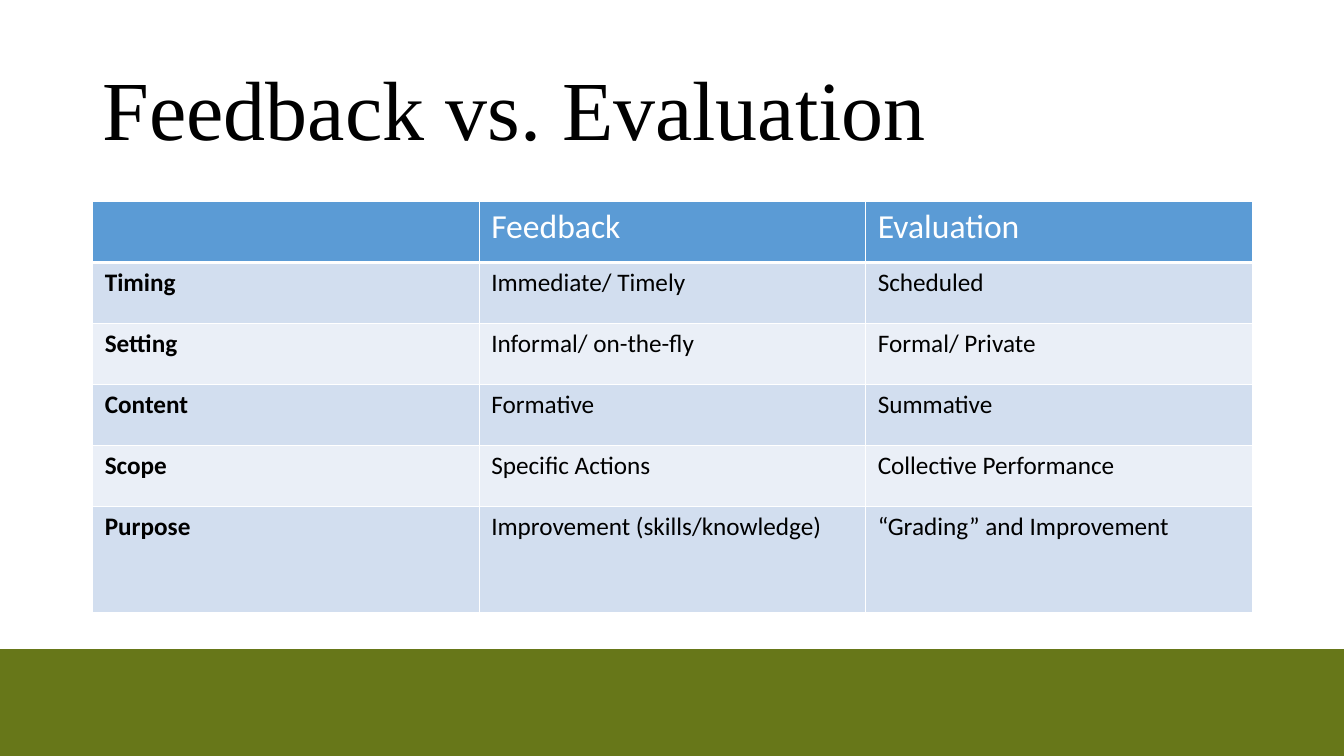
from lxml.etree import SubElement as Sub
from pptx import Presentation
from pptx.dml.color import RGBColor as RGB
from pptx.enum.shapes import MSO_SHAPE as Shape
from pptx.enum.text import MSO_ANCHOR as Anchor
from pptx.oxml.ns import qn
from pptx.util import Inches, Pt

ROWS = [
    ("", "Feedback", "Evaluation"),
    ("Timing", "Immediate/ Timely", "Scheduled"),
    ("Setting", "Informal/ on-the-fly", "Formal/ Private"),
    ("Content", "Formative", "Summative"),
    ("Scope", "Specific Actions", "Collective Performance"),
    ("Purpose", "Improvement (skills/knowledge)", "“Grading” and Improvement"),
]


def paint(fill, color):
    """Fill solidly with a hex colour."""
    fill.solid()
    fill.fore_color.rgb = RGB.from_string(color)


def style(para, face, size, color, bold=False):
    """Set the font of a paragraph."""
    font = para.font
    font.name, font.size, font.bold = face, Pt(size), bold
    paint(font.fill, color)


def add_band(slide, left, top, width, height, color):
    """Add a plain filled rectangle."""
    band = slide.shapes.add_shape(
        Shape.RECTANGLE, Inches(left), Inches(top), Inches(width), Inches(height))
    band.shadow.inherit = False
    paint(band.fill, color)
    band.line.fill.background()


def add_title(slide, text, left, top, width, height):
    """Add the slide title."""
    box = slide.shapes.add_textbox(
        Inches(left), Inches(top), Inches(width), Inches(height))
    frame = box.text_frame
    frame.word_wrap = True
    frame.vertical_anchor = Anchor.MIDDLE
    para = frame.paragraphs[0]
    para.text = text
    para.line_spacing = 0.9
    style(para, "Times New Roman", 60, "000000")


def add_edge(cell, side, width):
    """Add a white border to one side of a cell."""
    line = Sub(cell._tc.get_or_add_tcPr(), qn(f"a:ln{side}"), w=str(Pt(width)))
    Sub(Sub(line, qn("a:solidFill")), qn("a:srgbClr"), val="FFFFFF")


def set_cell(cell, text, row, col):
    """Write and style one cell by its place in the grid."""
    head = row == 0
    for side in "LRTB":
        add_edge(cell, side, 3 if head and side == "B" else 1)
    paint(cell.fill, "5B9BD5" if head else ("EAEFF7", "D2DEEF")[row % 2])
    cell.margin_left = cell.margin_right = Inches(0.12)
    cell.margin_top = cell.margin_bottom = Inches(0.05)
    cell.text = text
    para = cell.text_frame.paragraphs[0]
    if head:
        style(para, "Calibri", 24, "FFFFFF")
    else:
        style(para, "Calibri", 18, "000000", col == 0)


def add_grid(slide, rows, left, top, width, heights):
    """Add the table with equal columns."""
    count = len(rows[0])
    table = slide.shapes.add_table(
        len(rows), count, Inches(left), Inches(top),
        Inches(width), Inches(sum(heights))).table
    for col in table.columns:
        col.width = Inches(width / count)
    for row, (texts, height) in enumerate(zip(rows, heights)):
        table.rows[row].height = Inches(height)
        for col, text in enumerate(texts):
            set_cell(table.cell(row, col), text, row, col)


def main():
    """Build and save the slide."""
    deck = Presentation()
    deck.slide_width, deck.slide_height = Inches(13.33), Inches(7.5)
    slide = deck.slides.add_slide(deck.slide_layouts[6])
    paint(slide.background.fill, "FFFFFF")
    add_band(slide, 0, 6.44, 13.33, 1.06, "677719")
    add_title(slide, "Feedback vs. Evaluation", 0.92, 0.4, 11.5, 1.45)
    add_grid(slide, ROWS, 0.92, 2, 11.5, [0.605] * 5 + [1.05])
    deck.save("out.pptx")


if __name__ == "__main__":
    main()
